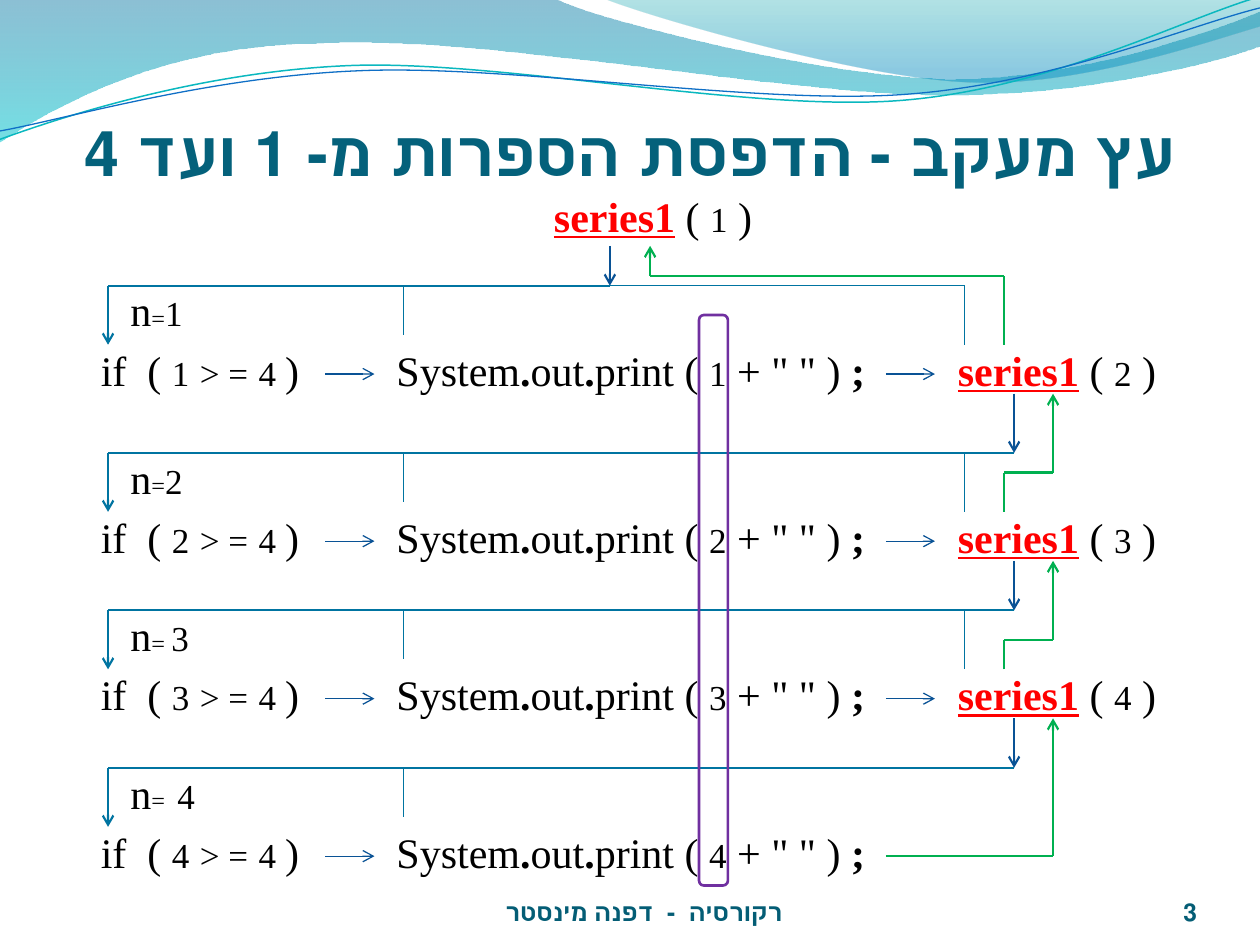
from itertools import pairwise

from lxml.etree import SubElement
from pptx import Presentation
from pptx.dml.color import RGBColor
from pptx.enum.shapes import MSO_CONNECTOR, MSO_SHAPE
from pptx.enum.text import MSO_ANCHOR, PP_ALIGN
from pptx.oxml.ns import qn
from pptx.util import Pt

TEAL, NAVY, GREEN, RED = "0074A1", "095295", "00B050", "FF0000"
LEFT, MID, CALL, DOWN, BACK, UP = 61.75, 230.5, 551.25, 579.5, 573.75, 601.75
ROWS = [
    (163.25, 140.5, "="),
    (258.75, 225, "="),
    (348.75, 320.5, "= "),
    (438.75, 410.5, "=  "),
]
WAVES = [
    [(0, -1), (317, -1), (343, 12, 478, 45, 546, 45), (614, 45, 690, 19, 720, 6.5),
     (720.5, 26), (708, 32, 626, 55, 537, 54), (448, 54, 275, 20, 185, 24.5),
     (93, 25, 33, 60, -1, 81.5)],
    [(345, -1), (366, 8, 491, 45, 554, 47), (616, 50, 692, 23, 720, 15), (720, 0)],
    [(-1, 80), (34.5, 67, 114, 41, 199.5, 37.5), (284.5, 34, 427, 64, 513.5, 57.5),
     (600, 51, 675.5, 11, 718.5, -1.5)],
    [(-1, 75), (34, 69, 118, 44, 204, 40.5), (290, 36.5, 430, 60, 516, 54),
     (602, 48, 677.5, 15, 720, 4.5)],
]


def paint(color, code):
    """Set a colour from a hex string."""
    color.rgb = RGBColor.from_string(code)


def add_wave(slide, path, close):
    """Draw an outline of lines (two numbers) and cubic curves (six numbers)."""
    points = [(Pt(x), Pt(y)) for seg in path for x, y in zip(seg[::2], seg[1::2])]
    pen = slide.shapes.build_freeform(*points[0], scale=1.0)
    pen.add_line_segments(points[1:], close=close)
    wave = pen.convert_to_shape()
    wave.shadow.inherit = False
    steps = iter(list(wave._element.iter(qn("a:lnTo"))))
    for seg in path[1:]:
        step = next(steps)
        if len(seg) == 6:
            curve = step.makeelement(qn("a:cubicBezTo"))
            step.addprevious(curve)
            for part in (step, next(steps), next(steps)):
                curve.append(part[0])
                part.getparent().remove(part)
    return wave


def add_band(slide, path, stops):
    """Draw a wave filled with a see-through gradient from top to bottom."""
    band = add_wave(slide, path, True)
    band.line.fill.background()
    band.fill.gradient()
    band.fill.gradient_angle = 270
    for stop, (place, code, _) in zip(band.fill.gradient_stops, stops):
        stop.position = place
        paint(stop.color, code)
    marks = band._element.spPr.iter(qn("a:srgbClr"))
    for mark, (_, _, alpha) in zip(marks, stops):
        SubElement(mark, qn("a:alpha")).set("val", str(alpha * 1000))


def add_curl(slide, path, code, width):
    """Draw a wave as a thin line."""
    curl = add_wave(slide, path, False)
    curl.fill.background()
    paint(curl.line.color, code)
    curl.line.width = Pt(width)


def add_box(slide, box, anchor):
    """Add an empty wrapped text box."""
    frame = slide.shapes.add_textbox(*map(Pt, box)).text_frame
    frame.word_wrap = True
    frame.vertical_anchor = anchor
    return frame


def add_label(slide, box, text, size, face, code, align=PP_ALIGN.CENTER, top=0):
    """Add one bold right-to-left line resting on the box bottom."""
    frame = add_box(slide, box, MSO_ANCHOR.BOTTOM)
    frame.margin_left = frame.margin_right = frame.margin_bottom = 0
    frame.margin_top = Pt(top)
    frame.text = text
    line = frame.paragraphs[0]
    line.alignment = align
    line._p.get_or_add_pPr().set("rtl", "1")
    font = line.runs[0].font
    font.size, font.name, font.bold = Pt(size), face, True
    paint(font.color, code)


def add_code(slide, box, parts):
    """Add a code line from (text, style) parts: s small, b bold, r red, d lowered."""
    line = add_box(slide, box, MSO_ANCHOR.MIDDLE).paragraphs[0]
    for text, style in parts:
        run = line.add_run()
        run.text = text
        font = run.font
        font.name, font.size = "Times New Roman", Pt(20 if "s" in style else 24)
        font.bold = "b" in style
        font.underline = "r" in style
        paint(font.color, RED if "r" in style else "000000")
        if "d" in style:
            font._element.set("baseline", "-2000")


def add_route(slide, points, code, width, arrow=True):
    """Join points with straight lines, with an arrowhead at the end."""
    for start, end in pairwise(points):
        line = slide.shapes.add_connector(MSO_CONNECTOR.STRAIGHT, *map(Pt, start + end))
        paint(line.line.color, code)
        line.line.width = Pt(width)
        SubElement(line._element.spPr, qn("a:effectLst"))
    if arrow:
        SubElement(line.line._get_or_add_ln(), qn("a:tailEnd")).set("type", "arrow")


def add_call(slide, box, num, lead=""):
    """Write a recursive call with its argument."""
    parts = [("series1", "br"), (" ( ", ""), (num, "s"), (" )", "")]
    add_code(slide, box, ([(lead, "")] if lead else []) + parts)


def add_row(slide, num, bar, tip, gap, last):
    """Draw one level of the trace tree."""
    top, mid = bar + 22.5, bar + 50.5
    root = 348.5 if num == "1" else DOWN
    add_code(slide, (50.5, top, 152, 50.5), [
        ("if  ( ", ""), (num, "s"), (" ", ""), ("> =", "s"), (" ", ""), ("4 ", "s"), (")", "")])
    add_code(slide, (67.5, bar - 11.25, 56.25, 50.5), [("n", ""), (gap, "d"), (num, "s")])
    add_code(slide, (219.5, top, 304, 50.5), [
        ("System", ""), (".", "b"), ("out", ""), (".", "b"), ("print ( ", ""),
        (num, "s"), (' + " " ) ', ""), (";", "b")])
    add_route(slide, [(root, tip), (root, bar)], NAVY, 1.25)
    add_route(slide, [(root, bar), (LEFT, bar), (LEFT, bar + 33.75)], TEAL, 1.25)
    add_route(slide, [(MID, bar), (MID, bar + 28)], TEAL, 0.75, False)
    add_route(slide, [(186, mid), (214, mid)], NAVY, 0.75)
    if not last:
        add_call(slide, (534.25, top, 140.5, 50.5), str(int(num) + 1), " ")
        add_route(slide, [(CALL, bar), (CALL, bar + 33.75)], TEAL, 0.75, False)
        add_route(slide, [(506.25, mid), (534.25, mid)], NAVY, 0.75)


def add_back(slide, bar, tip, bend, goal):
    """Draw the green way back from a call to its caller."""
    add_route(slide, [(BACK, bar + 33.75), (BACK, bend), (goal, bend), (goal, tip)], GREEN, 1.25)


def main():
    """Build the slide and save it."""
    deck = Presentation()
    deck.slide_width, deck.slide_height = Pt(720), Pt(540)
    slide = deck.slides.add_slide(deck.slide_layouts[6])
    add_band(slide, WAVES[0], [(0, TEAL, 45), (1, "00C6CF", 55)])
    add_band(slide, WAVES[1], [(0, "00A1A9", 30), (0.8, "008BBF", 45)])
    add_curl(slide, WAVES[2], "0AB8BF", 0.85)
    add_curl(slide, WAVES[3], "0F6FC6", 0.75)
    add_label(slide, (36, 39.5, 648, 68.5), "עץ מעקב - הדפסת הספרות מ- 1 ועד 4",
              36, "Calibri", "04617B", top=3.6)
    add_label(slide, (236, 500.5, 264, 28.75), "רקורסיה  -  דפנה מינסטר",
              14, "Cambria", "045D75")
    add_label(slide, (624, 500.5, 60, 28.75), "3", 14, "Cambria", "045D75", PP_ALIGN.RIGHT)
    add_call(slide, (309.5, 98, 129.5, 50.5), "1")
    for num, (bar, tip, gap) in enumerate(ROWS, 1):
        add_row(slide, str(num), bar, tip, gap, num == len(ROWS))
    first, final = ROWS[0], ROWS[-1]
    add_route(slide, [(348.5, first[0]), (CALL, first[0])], TEAL, 0.75, False)
    add_back(slide, *first[:2], 157.5, 371.5)
    for (bar, _, _), (_, tip, _) in zip(ROWS[1:-1], ROWS[1:-1]):
        add_back(slide, bar, tip, tip + 45, UP)
    end = final[0] + 50.5
    add_route(slide, [(506.25, end), (UP, end), (UP, final[1])], GREEN, 1.25)
    frame = slide.shapes.add_shape(MSO_SHAPE.ROUNDED_RECTANGLE, *map(Pt, (399.5, 180, 16.5, 326)))
    frame.shadow.inherit = False
    frame.fill.background()
    paint(frame.line.color, "7030A0")
    frame.line.width = Pt(1.5)
    deck.save("out.pptx")


if __name__ == "__main__":
    main()
